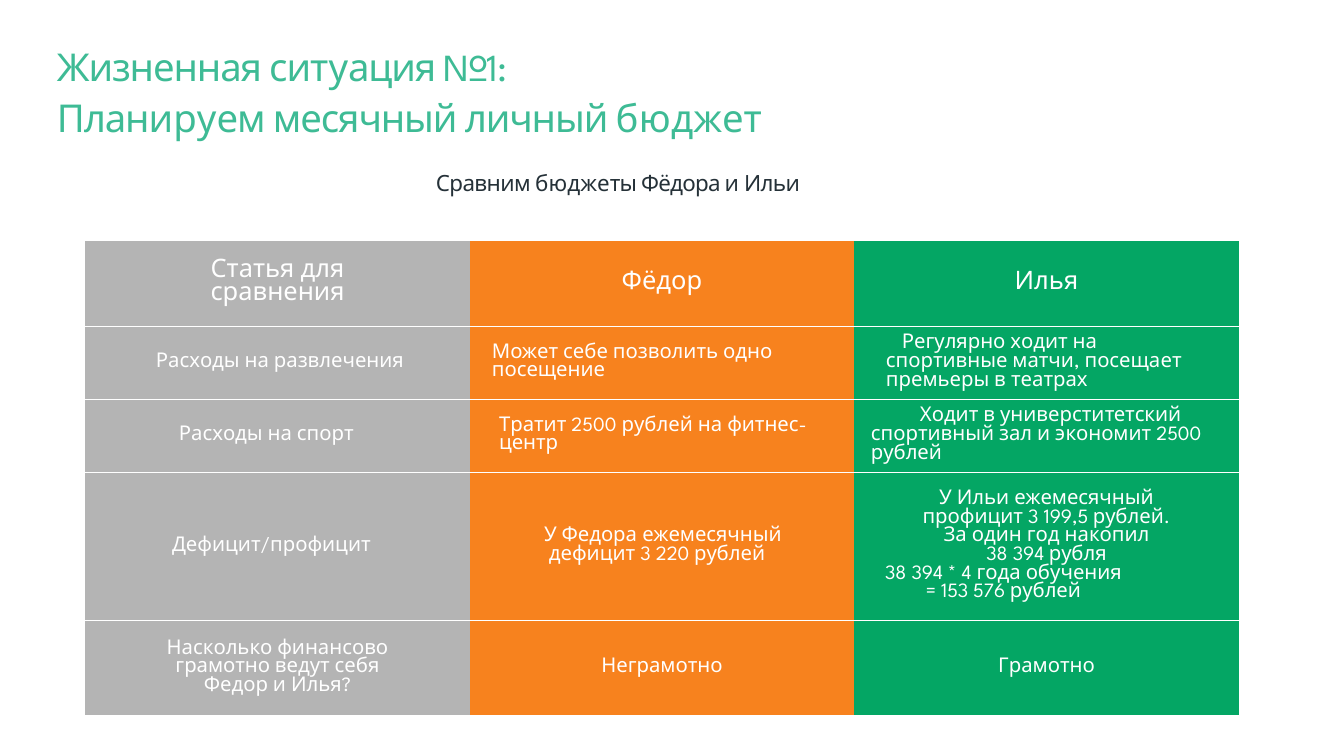
import pptx
import pptx.dml.color
import pptx.enum.text
import pptx.oxml
import pptx.oxml.ns
import pptx.util
from dataclasses import dataclass

ALIGN = pptx.enum.text.PP_ALIGN


@dataclass(frozen=True)
class Theme:
    font: str = "League Spartan"
    title: str = "3EBB95"
    ink: str = "253138"
    white: str = "FFFFFF"
    columns: tuple = ("B4B4B4", "F7821E", "04A664")
    title_size: float = 30.2
    subtitle_size: float = 17.6
    header_size: float = 20
    body_size: float = 16
    border_width: float = 0.25


@dataclass(frozen=True)
class Line:
    """Runs are divided by |, and ^ gives a run its own letter spacing in points."""
    text: str
    left: int = 0
    right: int = 0
    first: int = 0
    centred: bool = False


THEME = Theme()


def px(length):
    return pptx.util.Emu(length * 10000)


def rgb(colour):
    return pptx.dml.color.RGBColor.from_string(colour)


def centred(text, left=0, right=0):
    return Line(text, left, right, centred=True)


ROUBLES = "| р^-0.3|уб^-0.2|"
MONTHLY = "|еж^-0.3|емесячный"
EXPENSES = "Рас|х^-0.2|о^-0.1|ды на "
COLUMN_WIDTHS = (385, 384, 385)
ROW_HEIGHTS = (86, 73, 73, 148, 95)
ROWS = (
    ([centred("С|т^-0.3|а^-0.1|тья для сравнения", 101, 101)], [centred("Фёдор")], [centred("Илья")]),
    (
        [Line(EXPENSES + "развлечения", 71)],
        [Line("М|ож^-0.3|е^-0.2|т себе п|о^-0.2|зв|о^-0.1|лить |о^-0.1|дно посещение", 22)],
        [Line("Рег|у^-0.3|лярно |х^-0.2|о^-0.1|дит на спо|р^-0.2|тивные матчи, посеща"
              "|е^-0.2|т премьеры в |т^-0.2|еатрах", 32, 40, 16)],
    ),
    (
        [Line(EXPENSES + "спо|р^-0.2|т", 94)],
        [Line("Т^-1|ратит 2500 |р^-0.2|ублей на фитнес-центр", 29)],
        [Line("Х|о^-0.1|дит в универсти|тет^-0.2|ский спо|р^-0.2|тивный зал и э"
              "|к^-0.3|ономит 2500 |р^-0.3|уб^-0.2|лей", 17, 20, 49)],
    ),
    (
        [Line("Дефицит/профицит", 87)],
        [Line("У Федора " + MONTHLY, 74), Line("дефицит 3 220" + ROUBLES + "лей", 79)],
        [
            centred("У Ильи " + MONTHLY),
            centred("профицит 3 19|9^-0.1|,5" + ROUBLES + "лей."),
            centred("За |о^-0.2|дин |г^-0.1|о^-0.2|д на|к^-0.3|опил 38 394" + ROUBLES + "ля", 83, 83),
            centred("38 394 * 4 |г^-0.1|о^-0.2|да о|б^-0.3|учения", right=86),
            centred("= 153| 5^-0.3|7^-0.2|6" + ROUBLES + "лей", right=86),
        ],
    ),
    (
        [centred("Нас|к^-0.3|о^-0.1|ль|к^-0.3|о финансово гра|мо^-0.2|тно ведут себя Федор и Илья?", 79, 79)],
        [centred("Неграм|о^-0.2|тно")],
        [centred("Г^-0.6|рам|о^-0.2|тно")],
    ),
)
HEADING = (
    (Line("Жизненная сит^-0.9|у^-1.9|ация №1:^-1", 2), THEME.title_size, THEME.title, 0),
    (Line("Плани^-0.9|р^-1.8|у^-1.9|ем месячный личный б^-0.9|ю^-1.8|д^-0.9|ж^-2.1|е^-1.3|т^-0.9", 2),
     THEME.title_size, THEME.title, 4),
    (Line("Сравним б^-0.5|ю^-1.1|д^-0.5|ж^-1.3|е^-0.8|ты Фёдора и^-0.6| Ильи^-0.5", 381),
     THEME.subtitle_size, THEME.ink, 23),
)


def write_line(paragraph, line, size, colour):
    properties = paragraph._p.get_or_add_pPr()
    properties.set("marL", str(px(line.left)))
    properties.set("marR", str(px(line.right)))
    properties.set("indent", str(px(line.first)))
    paragraph.alignment = ALIGN.CENTER if line.centred else ALIGN.LEFT
    for piece in line.text.split("|"):
        text, _, tracking = piece.partition("^")
        run = paragraph.add_run()
        run.text = text
        run.font.name = THEME.font
        run.font.size = pptx.util.Pt(size)
        run.font.color.rgb = rgb(colour)
        run._r.get_or_add_rPr().set("spc", str(round(float(tracking or 0) * 100)))


def next_paragraph(text_frame, index):
    return text_frame.add_paragraph() if index else text_frame.paragraphs[0]


def set_borders(cell):
    properties = cell._tc.get_or_add_tcPr()
    width = pptx.util.Pt(THEME.border_width)
    white = f'<a:solidFill><a:srgbClr val="{THEME.white}"/></a:solidFill>'
    sides = (("lnL", "<a:noFill/>"), ("lnR", "<a:noFill/>"), ("lnT", white), ("lnB", white))
    for position, (tag, paint) in enumerate(sides):
        border = pptx.oxml.parse_xml(
            f'<a:{tag} {pptx.oxml.ns.nsdecls("a")} w="{width}">{paint}</a:{tag}>'
        )
        properties.insert(position, border)


def fill_cell(cell, lines, size, colour):
    cell.margin_left = cell.margin_right = cell.margin_top = cell.margin_bottom = 0
    cell.vertical_anchor = pptx.enum.text.MSO_ANCHOR.MIDDLE
    cell.fill.solid()
    cell.fill.fore_color.rgb = rgb(colour)
    set_borders(cell)
    for index, line in enumerate(lines):
        write_line(next_paragraph(cell.text_frame, index), line, size, THEME.white)


def add_heading(slide):
    text_frame = slide.shapes.add_textbox(px(55), px(43), px(790), px(155)).text_frame
    text_frame.word_wrap = True
    text_frame.margin_left = text_frame.margin_right = 0
    text_frame.margin_top = text_frame.margin_bottom = 0
    for index, (line, size, colour, space) in enumerate(HEADING):
        paragraph = next_paragraph(text_frame, index)
        write_line(paragraph, line, size, colour)
        if space:
            paragraph.space_before = pptx.util.Pt(space)


def add_budget_table(slide):
    frame = slide.shapes.add_table(
        len(ROW_HEIGHTS), len(COLUMN_WIDTHS),
        px(85), px(240), px(sum(COLUMN_WIDTHS)), px(sum(ROW_HEIGHTS)),
    )
    table = frame.table
    table.first_row = table.horz_banding = False
    for column, width in zip(table.columns, COLUMN_WIDTHS):
        column.width = px(width)
    for row_index, (row, height, contents) in enumerate(zip(table.rows, ROW_HEIGHTS, ROWS)):
        row.height = px(height)
        size = THEME.body_size if row_index else THEME.header_size
        for cell, lines, colour in zip(row.cells, contents, THEME.columns):
            fill_cell(cell, lines, size, colour)


def main():
    presentation = pptx.Presentation()
    presentation.slide_width, presentation.slide_height = px(1344), px(756)
    slide = presentation.slides.add_slide(presentation.slide_layouts[6])

    # Title and subtitle
    add_heading(slide)

    # Comparison of the two budgets
    add_budget_table(slide)

    presentation.save("out.pptx")


if __name__ == "__main__":
    main()
